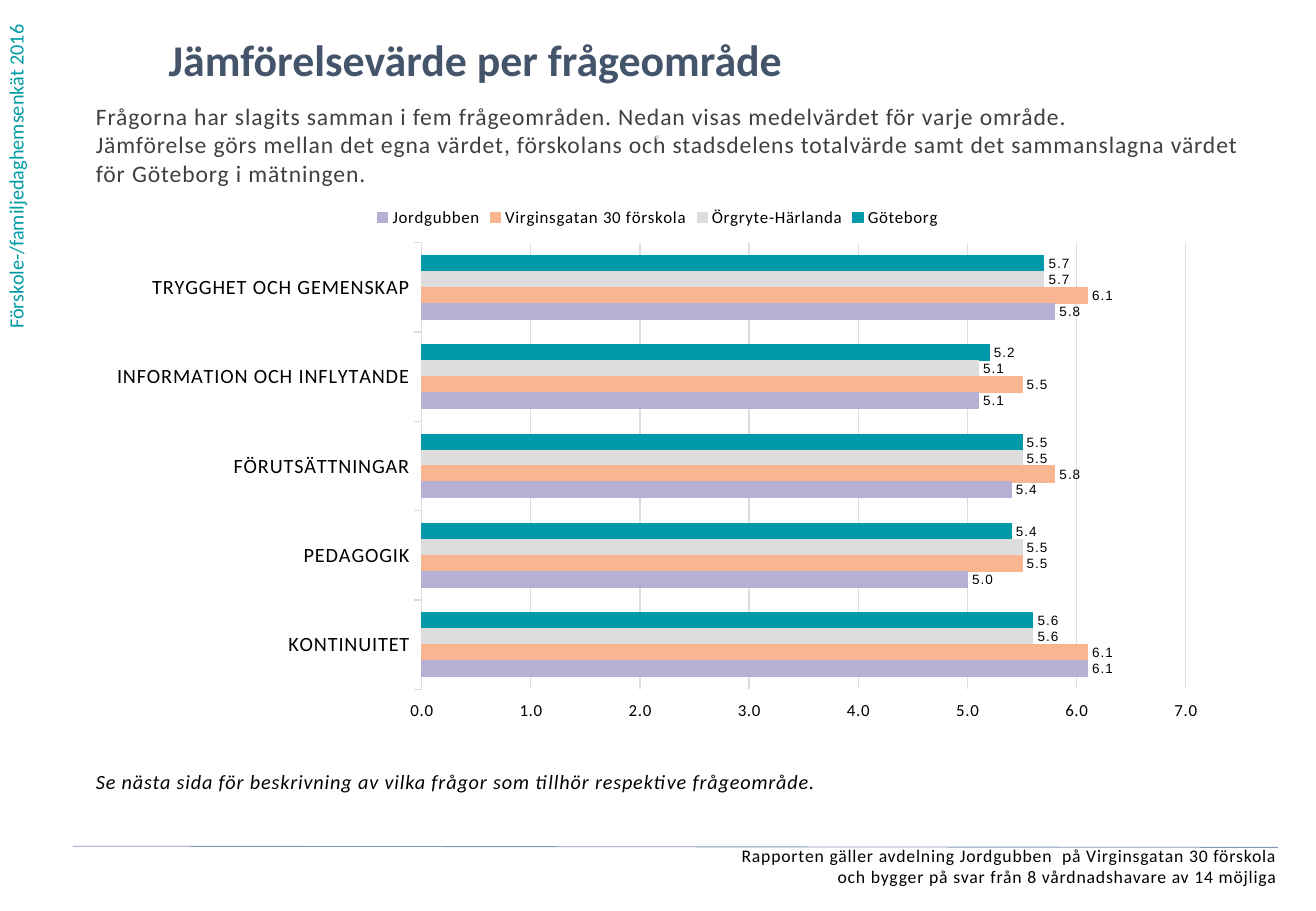
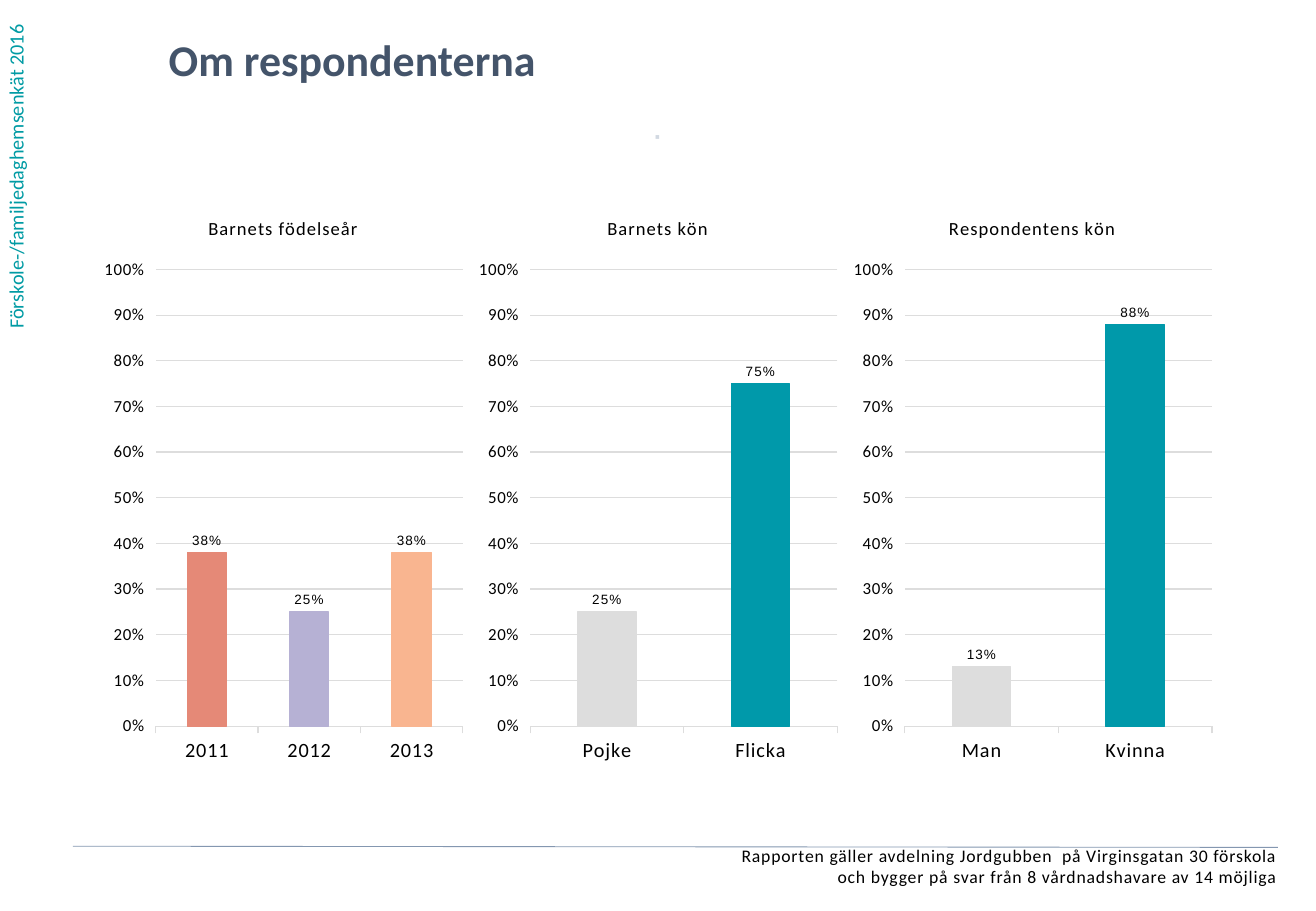
"""Build two survey report slides with native charts."""
import pptx
import pptx.chart.data
import pptx.dml.color
import pptx.enum.chart
import pptx.enum.shapes
import pptx.enum.text
import pptx.oxml
import pptx.oxml.ns
import pptx.util

Pt = pptx.util.Pt
RGB = pptx.dml.color.RGBColor
ALIGN = pptx.enum.text.PP_ALIGN
XL = pptx.enum.chart
qn = pptx.oxml.ns.qn

BLACK = RGB(0, 0, 0)
SLATE = RGB(0x44, 0x54, 0x6A)
DARK_GREY = RGB(0x40, 0x40, 0x40)
TEAL_TEXT = RGB(0x00, 0x9B, 0xA4)
PALE = RGB(0xD2, 0xD9, 0xE2)
RULE = RGB(0x84, 0x97, 0xB0)
TEAL = RGB(0x00, 0x99, 0xAA)
GREY = RGB(0xDD, 0xDD, 0xDD)
PEACH = RGB(0xF9, 0xB5, 0x90)
LILAC = RGB(0xB6, 0xB1, 0xD4)
CORAL = RGB(0xE5, 0x89, 0x77)

FONT = "Calibri"
PAGE_W, PAGE_H = 780, 540
CONTENT_LEFT, CONTENT_W, CHART_TOP = 56.8, 666, 115.2

SERIES = [
    ("Göteborg", [5.7, 5.2, 5.5, 5.4, 5.6], TEAL),
    ("Örgryte-Härlanda", [5.7, 5.1, 5.5, 5.5, 5.6], GREY),
    ("Virginsgatan 30 förskola", [6.1, 5.5, 5.8, 5.5, 6.1], PEACH),
    ("Jordgubben", [5.8, 5.1, 5.4, 5.0, 6.1], LILAC),
]
AREAS = ["TRYGGHET OCH GEMENSKAP", "INFORMATION OCH INFLYTANDE",
         "FÖRUTSÄTTNINGAR", "PEDAGOGIK", "KONTINUITET"]
RESPONDENTS = [
    ("Barnets födelseår", ["2013", "2012", "2011"], [0.38, 0.25, 0.38], [PEACH, LILAC, CORAL]),
    ("Barnets kön", ["Flicka", "Pojke"], [0.75, 0.25], [TEAL, GREY]),
    ("Respondentens kön", ["Kvinna", "Man"], [0.88, 0.13], [TEAL, GREY]),
]


def style_font(font, size, color=BLACK, bold=False, italic=False, name=FONT):
    """Set the face, size, colour and weight of a font."""
    font.name, font.size, font.bold, font.italic = name, Pt(size), bold, italic
    font.color.rgb = color


def write_text(sp, box, lines, align=ALIGN.LEFT, inset=(0, 0), spacing=50, **fmt):
    """Place a shape in a box and write one formatted paragraph per line."""
    sp.left, sp.top, sp.width, sp.height = map(Pt, box)
    tf = sp.text_frame
    tf.word_wrap = True
    tf.auto_size = pptx.enum.text.MSO_AUTO_SIZE.NONE
    tf.vertical_anchor = pptx.enum.text.MSO_ANCHOR.TOP
    tf.margin_left = tf.margin_right = Pt(inset[0])
    tf.margin_top = tf.margin_bottom = Pt(inset[1])
    for i, line in enumerate(lines):
        p = tf.paragraphs[0] if i == 0 else tf.add_paragraph()
        pPr = p._p.get_or_add_pPr()
        pPr.set("marL", "0")
        pPr.set("indent", "0")
        pPr.append(pptx.oxml.parse_xml(f"<a:buNone {pptx.oxml.ns.nsdecls('a')}/>"))
        p.alignment = align
        p.space_before = Pt(0)
        r = p.add_run()
        r.text = line
        style_font(r.font, **fmt)
        r._r.get_or_add_rPr().set("spc", str(spacing))
    return sp


def add_text(s, box, lines, **fmt):
    """Add a text box with formatted lines."""
    return write_text(s.shapes.add_textbox(*map(Pt, box)), box, lines, **fmt)


def add_side_label(s, box):
    """Add the survey name running up the left edge."""
    sp = add_text(s, box, ["Förskole-/familjedaghemsenkät 2016"], inset=(7.2, 3.6),
                  spacing=0, size=12, color=TEAL_TEXT)
    sp.text_frame._txBody.bodyPr.set("vert", "vert270")


def add_footer(s, left, top, width):
    """Add the rule and the right-aligned report note below it."""
    line = s.shapes.add_connector(pptx.enum.shapes.MSO_CONNECTOR.STRAIGHT,
                                  Pt(left), Pt(top), Pt(left + width), Pt(top + 0.7))
    line.line.color.rgb = RULE
    line.line.width = Pt(0.5)
    line._element.spPr.append(pptx.oxml.parse_xml(f"<a:effectLst {pptx.oxml.ns.nsdecls('a')}/>"))
    add_text(s, (left, top - 0.8, width - 0.4, 31),
             ["Rapporten gäller avdelning Jordgubben  på Virginsgatan 30 förskola",
              "och bygger på svar från 8 vårdnadshavare av 14 möjliga"],
             align=ALIGN.RIGHT, size=10.5)


def add_page(prs, layout, title):
    """Add a slide with its title and the shared parts."""
    s = prs.slides.add_slide(prs.slide_layouts[layout])
    write_text(s.shapes.title, (100, 19.5, 600, 41), [title],
               spacing=0, size=26, color=SLATE, bold=True)
    add_side_label(s, (-1.5, 0, 29, 202))
    add_text(s, (278.7, 73.7, 222, 28), ["⋅"], align=ALIGN.CENTER,
             size=12, color=PALE, bold=True)
    add_footer(s, 43.2, 501.6, 714.2)
    return s


def paint(fmt, color):
    """Give a bar a fill and a matching outline."""
    fmt.fill.solid()
    fmt.fill.fore_color.rgb = color
    fmt.line.color.rgb = color
    fmt.line.width = Pt(0.75)


def set_plot_box(chart, box):
    """Fix the inner plot area as fractions of the chart."""
    plot_area = chart.element.find(".//" + qn("c:plotArea"))
    for old in plot_area.findall(qn("c:layout")):
        plot_area.remove(old)
    sizes = "".join(f'<c:{k} val="{v}"/>' for k, v in zip("xywh", box))
    plot_area.insert(0, pptx.oxml.parse_xml(
        f"<c:layout {pptx.oxml.ns.nsdecls('c')}><c:manualLayout>"
        '<c:layoutTarget val="inner"/><c:xMode val="edge"/><c:yMode val="edge"/>'
        f"{sizes}</c:manualLayout></c:layout>"))


def add_bars(s, kind, box, cats, series, top_value, step, fmt, plot_box, title=None):
    """Add a clustered chart with labelled bars and reversed categories."""
    data = pptx.chart.data.CategoryChartData()
    data.categories = cats
    for name, vals, _ in series:
        data.add_series(name, vals)
    chart = s.shapes.add_chart(kind, *map(Pt, box), data).chart
    style_font(chart.font, 10)
    chart.has_title = title is not None
    if title:
        p = chart.chart_title.text_frame.paragraphs[0]
        r = p.add_run()
        r.text = title
        style_font(r.font, 11)
        r._r.get_or_add_rPr().set("spc", "50")
        chart.chart_title.include_in_layout = False
    chart.has_legend = len(series) > 1
    if chart.has_legend:
        chart.legend.position = XL.XL_LEGEND_POSITION.TOP
        chart.legend.include_in_layout = False
        style_font(chart.legend.font, 10)

    cat, val = chart.category_axis, chart.value_axis
    cat.reverse_order = True
    cat.has_major_gridlines = False
    val.minimum_scale, val.maximum_scale, val.major_unit = 0, top_value, step
    val.has_major_gridlines = True
    val.tick_label_position = XL.XL_TICK_LABEL_POSITION.HIGH
    val.tick_labels.number_format = fmt
    val.tick_labels.number_format_is_linked = False
    val.format.line.fill.background()
    for axis, size in ((cat, 12), (val, 10)):
        axis.major_tick_mark = XL.XL_TICK_MARK.OUTSIDE
        style_font(axis.tick_labels.font, size)
    for line in (cat.format.line, val.major_gridlines.format.line):
        line.color.rgb = GREY
        line.width = Pt(0.75)

    plot = chart.plots[0]
    plot.gap_width, plot.overlap = 162, 0
    plot.vary_by_categories = False
    for ser, (_, _, color) in zip(plot.series, series):
        colors = color if isinstance(color, list) else []
        paint(ser.format, TEAL if colors else color)
        for i, point_color in enumerate(colors):
            paint(ser.points[i].format, point_color)
        labels = ser.data_labels
        labels.show_value = True
        labels.number_format = fmt
        labels.number_format_is_linked = False
        labels.position = XL.XL_LABEL_POSITION.OUTSIDE_END
        style_font(labels.font, 8, name="Arial")
    set_plot_box(chart, plot_box)
    for rPr in chart.element.iter(qn("a:defRPr")):
        rPr.set("spc", "50")


def add_comparison_slide(prs):
    """Add the slide comparing mean values by question area."""
    s = add_page(prs, 1, "Jämförelsevärde per frågeområde")
    write_text(s.placeholders[1], (CONTENT_LEFT, 60.3, 681, 54),
               ["Frågorna har slagits samman i fem frågeområden. "
                "Nedan visas medelvärdet för varje område.",
                "Jämförelse görs mellan det egna värdet, förskolans och stadsdelens "
                "totalvärde samt det sammanslagna värdet för Göteborg i mätningen."],
               size=14, color=DARK_GREY)
    add_bars(s, XL.XL_CHART_TYPE.BAR_CLUSTERED, (CONTENT_LEFT, CHART_TOP, CONTENT_W, 319),
             AREAS, SERIES, 7, 1, "0.0;0.0", (0.29, 0.09, 0.68, 0.83))
    add_text(s, (CONTENT_LEFT, 456, CONTENT_W, 20),
             ["Se nästa sida för beskrivning av vilka frågor som tillhör "
              "respektive frågeområde."], size=12, italic=True)


def add_respondent_slide(prs):
    """Add the slide with one chart per background question."""
    s = add_page(prs, 5, "Om respondenterna")
    width = CONTENT_W / len(RESPONDENTS)
    for i, (title, cats, vals, colors) in enumerate(RESPONDENTS):
        add_bars(s, XL.XL_CHART_TYPE.COLUMN_CLUSTERED,
                 (CONTENT_LEFT + i * width, CHART_TOP, width, 342.7), cats,
                 [("Series 1", vals, colors)], 1, 0.1, "0%;0%",
                 (0.16, 0.13, 0.82, 0.79), title)


def main():
    """Build and save the presentation."""
    prs = pptx.Presentation()
    prs.slide_width, prs.slide_height = Pt(PAGE_W), Pt(PAGE_H)
    add_comparison_slide(prs)
    add_respondent_slide(prs)
    prs.save("out.pptx")


if __name__ == "__main__":
    main()
